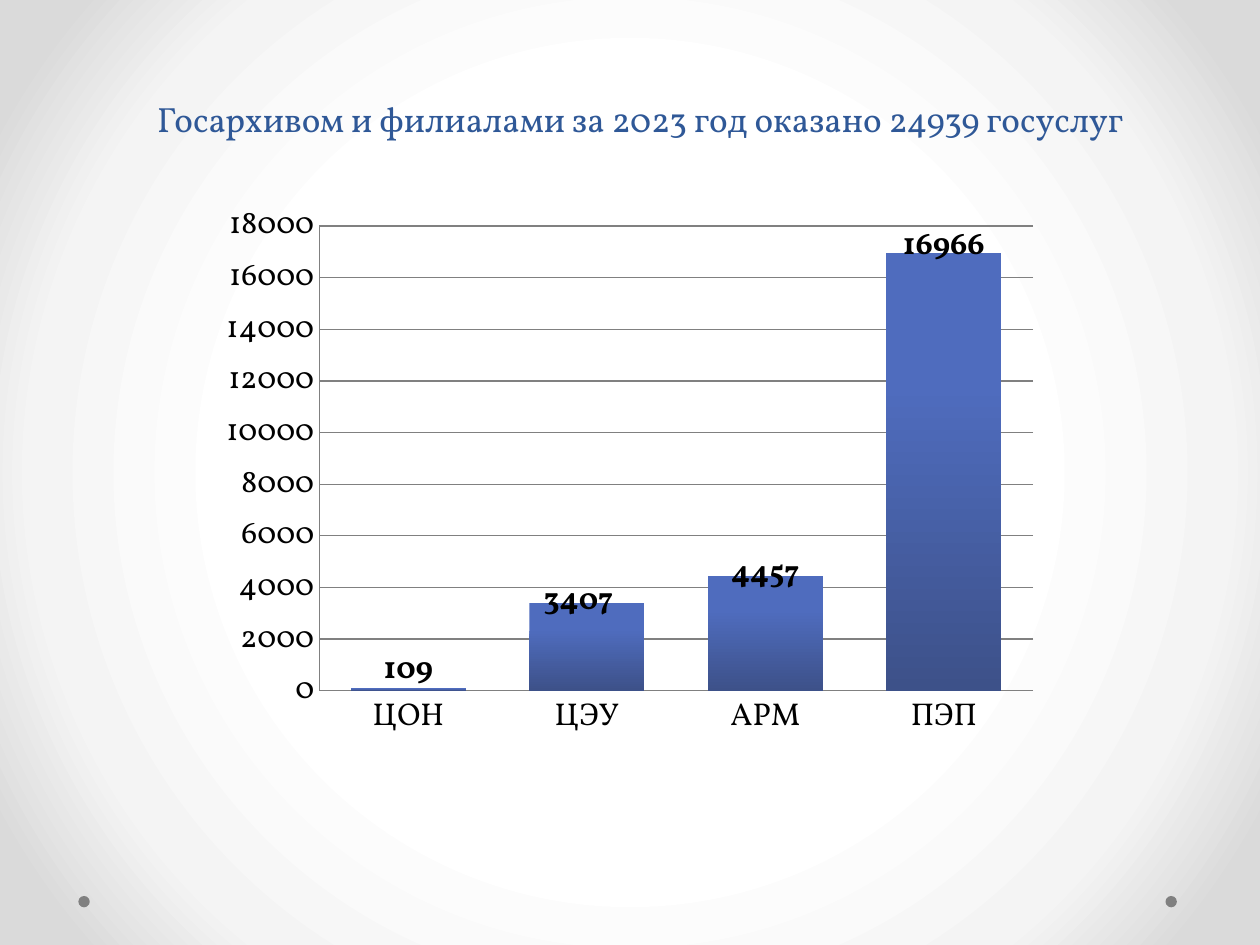
from dataclasses import dataclass

from pptx import Presentation
from pptx.chart.data import CategoryChartData
from pptx.dml.color import RGBColor
from pptx.enum.chart import XL_CHART_TYPE, XL_LABEL_POSITION, XL_TICK_MARK
from pptx.enum.shapes import MSO_SHAPE
from pptx.enum.text import MSO_ANCHOR, PP_ALIGN
from pptx.oxml import parse_xml
from pptx.oxml.ns import nsdecls, qn
from pptx.util import Pt


@dataclass(frozen=True)
class Theme:
    """Colours and type of the slide."""
    font: str = "Vollkorn"
    title_size: int = 20
    chart_size: int = 18
    title: str = "2F5897"
    text: str = "000000"
    dot: str = "808080"
    grid: str = "808080"
    bar_stops: tuple = ((0.3, "4F6CBE"), (1, "3D5189"))
    background_stops: tuple = ((50, "FFFFFF"), (76, "F4F4F4"), (92, "DADADA"))


THEME = Theme()
TITLE = "Госархивом и филиалами за 2023 год оказано 24939 госуслуг"
SERVICES = {"ЦОН": 109, "ЦЭУ": 3407, "АРМ": 4457, "ПЭП": 16966}
LABEL_SHIFTS = ((0, -0.08), (-0.01, -0.05), (0, -0.05), (0, -0.06))
PLOT_BOX = {"x": 0.13, "y": 0.06, "w": 0.85, "h": 0.83}


def apply_format(target, **values):
    """Set each named attribute on the target."""
    for name, value in values.items():
        setattr(target, name, value)


def style_font(font, size, color, bold=False):
    """Give a font the theme typeface, a size, a weight and a colour."""
    apply_format(font, name=THEME.font, size=Pt(size), bold=bold)
    font.color.rgb = RGBColor.from_string(color)


def manual_layout(box, inner=False):
    """Return a chart layout element with the given fractions."""
    target = '<c:layoutTarget val="inner"/>' if inner else ""
    modes = '<c:xMode val="edge"/><c:yMode val="edge"/>' if inner else ""
    values = "".join(f'<c:{name} val="{value}"/>' for name, value in box.items())
    return parse_xml(f'<c:layout {nsdecls("c")}><c:manualLayout>{target}{modes}{values}'
                     '</c:manualLayout></c:layout>')


def paint_background(slide):
    """Fill the slide with a radial gradient that darkens outwards."""
    slide.background.fill.gradient()
    gradient = slide.element.find(".//" + qn("a:gradFill"))
    stops = "".join(f'<a:gs pos="{position * 1000}"><a:srgbClr val="{color}"/></a:gs>'
                    for position, color in THEME.background_stops)
    radial = parse_xml(f'<a:gradFill {nsdecls("a")} rotWithShape="1"><a:gsLst>{stops}</a:gsLst>'
                       '<a:path path="circle"><a:fillToRect l="50000" t="50000" r="50000" '
                       'b="50000"/></a:path></a:gradFill>')
    gradient.getparent().replace(gradient, radial)


def add_corner_dots(slide, left, top, width, size):
    """Place a dot at each end of a row."""
    for dot_left in (left, left + width - size):
        dot = slide.shapes.add_shape(MSO_SHAPE.OVAL, Pt(dot_left), Pt(top), Pt(size), Pt(size))
        dot.shadow.inherit = False
        dot.fill.solid()
        dot.fill.fore_color.rgb = RGBColor.from_string(THEME.dot)
        dot.line.fill.background()


def add_title(slide, left, top, width, height):
    """Write the centred title at the bottom of its box."""
    frame = slide.shapes.add_textbox(Pt(left), Pt(top), Pt(width), Pt(height)).text_frame
    apply_format(frame, word_wrap=True, vertical_anchor=MSO_ANCHOR.BOTTOM)
    paragraph = frame.paragraphs[0]
    apply_format(paragraph, text=TITLE, alignment=PP_ALIGN.CENTER)
    style_font(paragraph.runs[0].font, THEME.title_size, THEME.title)


def style_axes(chart):
    """Drop the tick marks and colour the axis and grid lines."""
    value_axis = chart.value_axis
    apply_format(value_axis, minimum_scale=0, maximum_scale=18000, major_unit=2000,
                 has_major_gridlines=True)
    for axis in (chart.category_axis, value_axis):
        apply_format(axis, major_tick_mark=XL_TICK_MARK.NONE, minor_tick_mark=XL_TICK_MARK.NONE)
    for part in (chart.category_axis, value_axis, value_axis.major_gridlines):
        part.format.line.width = Pt(0.75)
        part.format.line.color.rgb = RGBColor.from_string(THEME.grid)


def style_bars(plot):
    """Shade the bars and lift each value above its bar."""
    apply_format(plot, gap_width=55, overlap=100, vary_by_categories=False)
    series = plot.series[0]
    fill = series.format.fill
    fill.gradient()
    fill.gradient_angle = 270
    for stop, (position, color) in zip(fill.gradient_stops, THEME.bar_stops):
        stop.position = position
        stop.color.rgb = RGBColor.from_string(color)
    labels = series.data_labels
    apply_format(labels, show_value=True, position=XL_LABEL_POSITION.INSIDE_END)
    style_font(labels.font, THEME.chart_size, THEME.text, bold=True)
    for index in range(len(LABEL_SHIFTS)):
        label = series.points[index].data_label
        label.position = XL_LABEL_POSITION.INSIDE_END
        style_font(label.font, THEME.chart_size, THEME.text, bold=True)
    label_elements = labels._element.findall(qn("c:dLbl"))
    for element, (x, y) in zip(label_elements, LABEL_SHIFTS):
        element.find(qn("c:idx")).addnext(manual_layout({"x": x, "y": y}))


def add_services_chart(slide, left, top, width, height):
    """Draw the column chart of services by channel."""
    data = CategoryChartData()
    data.categories = list(SERVICES)
    data.add_series("Series 1", list(SERVICES.values()))
    chart = slide.shapes.add_chart(XL_CHART_TYPE.COLUMN_STACKED, Pt(left), Pt(top),
                                   Pt(width), Pt(height), data).chart
    apply_format(chart, has_legend=False, has_title=False)
    style_font(chart.font, THEME.chart_size, THEME.text)
    style_axes(chart)
    style_bars(chart.plots[0])
    plot_area = chart._chartSpace.find(".//" + qn("c:plotArea"))
    for layout in plot_area.findall(qn("c:layout")):
        plot_area.remove(layout)
    plot_area.insert(0, manual_layout(PLOT_BOX, inner=True))


def main():
    """Build and save the slide."""
    presentation = Presentation()
    apply_format(presentation, slide_width=Pt(720), slide_height=Pt(540))
    slide = presentation.slides.add_slide(presentation.slide_layouts[6])
    paint_background(slide)
    add_corner_dots(slide, 44.8, 512, 627.7, 6.5)
    add_title(slide, 60, 15, 612, 68.5)
    add_services_chart(slide, 120, 110, 480, 320)
    presentation.save("out.pptx")


if __name__ == "__main__":
    main()
